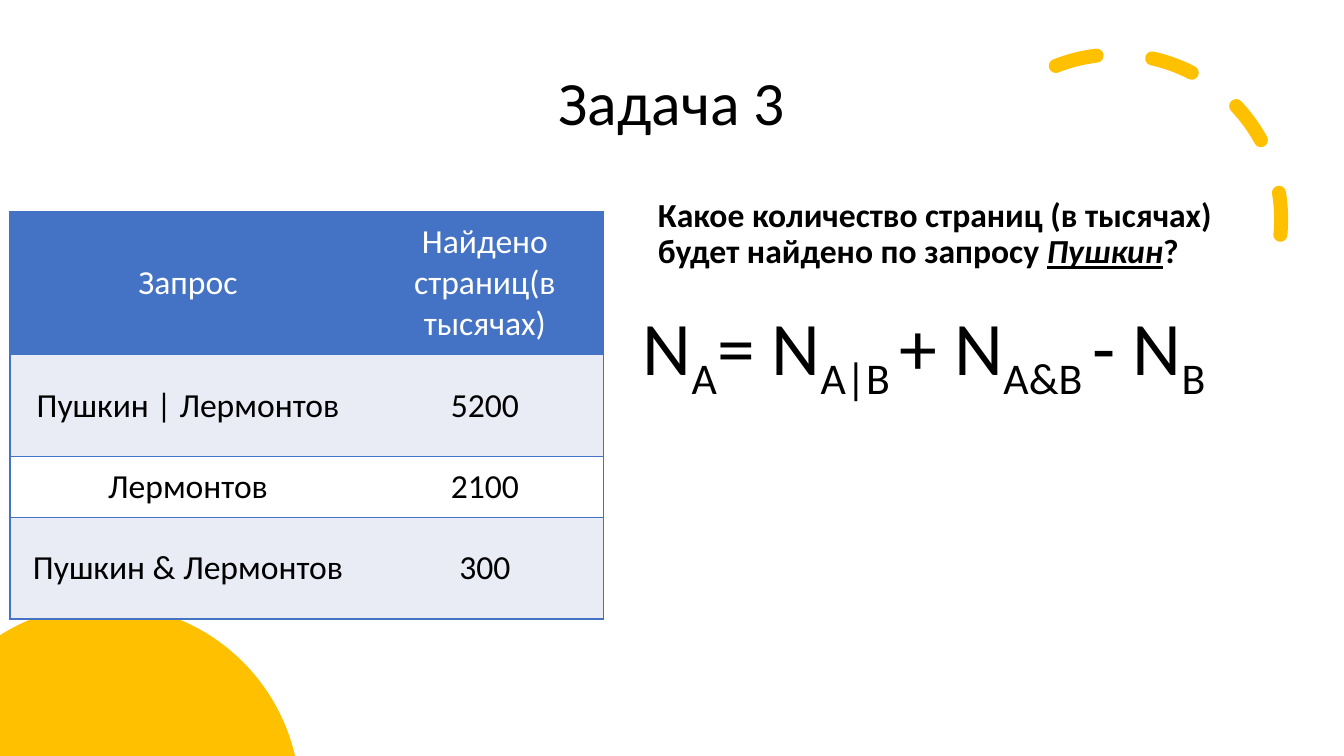
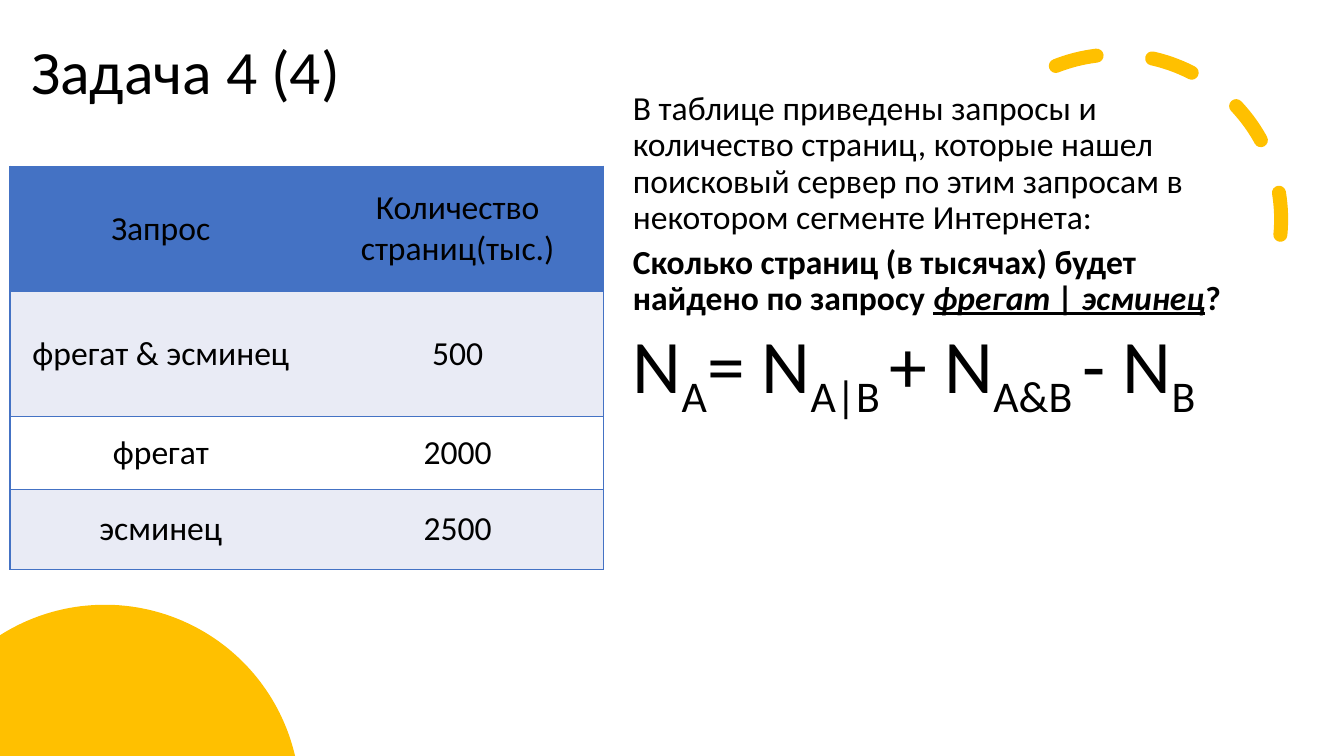
import math

import pptx
import pptx.util
import pptx.dml.color
import pptx.enum.dml
import pptx.enum.shapes
import pptx.enum.text
import pptx.oxml.ns
import pptx.oxml.xmlchemy
from lxml import etree

RGBColor = pptx.dml.color.RGBColor
Align = pptx.enum.text.PP_ALIGN
Anchor = pptx.enum.text.MSO_ANCHOR
qn = pptx.oxml.ns.qn

WIDTH = pptx.util.Inches(13.333)
HEIGHT = pptx.util.Inches(7.5)
FONT = "Calibri"
BLACK = RGBColor(0x00, 0x00, 0x00)
WHITE = RGBColor(0xFF, 0xFF, 0xFF)
YELLOW = RGBColor(0xFF, 0xC0, 0x00)
BLUE = RGBColor(0x44, 0x72, 0xC4)
PALE = RGBColor(0xE9, 0xEB, 0xF5)

TITLE_SIZE, BODY_SIZE, FORMULA_SIZE = 44, 24, 54
TABLE_LEFT = 0.75
FORMULA = [("N", ""), ("A", "_"), ("= N", ""), ("A|B ", "_"),
           ("+ N", ""), ("A&B ", "_"), ("- N", ""), ("B", "_")]


def across(percent):
    return round(WIDTH * percent / 100)


def down(percent):
    return round(HEIGHT * percent / 100)


def box(left, top, width, height):
    return across(left), down(top), across(width), down(height)


def add_run(paragraph, text, size, color=BLACK, style=""):
    run = paragraph.add_run()
    run.text = text
    font = run.font
    font.name, font.size = FONT, pptx.util.Pt(size)
    font.color.rgb = color
    font.bold = "b" in style
    font.italic = "i" in style
    font.underline = "u" in style
    if "_" in style:
        run._r.get_or_add_rPr().set("baseline", "-25000")


def add_title(slide, text, place, align):
    title = slide.shapes.title
    title.left, title.top, title.width, title.height = box(*place)
    frame = title.text_frame
    frame.auto_size = pptx.enum.text.MSO_AUTO_SIZE.NONE
    frame.vertical_anchor = Anchor.MIDDLE
    paragraph = frame.paragraphs[0]
    paragraph.alignment, paragraph.line_spacing = align, 0.9
    add_run(paragraph, text, TITLE_SIZE)


def add_text(slide, place, paragraphs, size=BODY_SIZE, before=0, after=6):
    frame = slide.shapes.add_textbox(*box(*place)).text_frame
    frame.word_wrap = True
    for index, runs in enumerate(paragraphs):
        paragraph = frame.add_paragraph() if index else frame.paragraphs[0]
        paragraph.line_spacing = 0.9
        paragraph.space_before = pptx.util.Pt(before)
        paragraph.space_after = pptx.util.Pt(after)
        for text, style in runs:
            add_run(paragraph, text, size, style=style)


def add_formula(slide, left, top):
    add_text(slide, (left, top, 45.9, 14.4), [FORMULA], FORMULA_SIZE, 10, 0)


def add_dashed_arc(slide):
    diameter = across(24.53)
    arc = slide.shapes.add_shape(pptx.enum.shapes.MSO_SHAPE.ARC,
                                 across(70.8), down(7.2), diameter, diameter)
    arc.shadow.inherit = False
    arc.adjustments[0], arc.adjustments[1] = 144.42, 0
    arc.rotation = 66.1
    arc.fill.background()
    arc.line.color.rgb = YELLOW
    arc.line.width = pptx.util.Pt(10)
    arc.line.dash_style = pptx.enum.dml.MSO_LINE.DASH
    properties = arc._element.spPr
    properties.find(qn("a:xfrm")).set("flipH", "1")
    properties.find(qn("a:ln")).set("cap", "rnd")


def add_corner_disc(slide, steps=90):
    center, radius = across(7.8), across(14.53)
    middle = down(80) + radius
    start = math.pi + math.acos(center / radius)
    end = 2 * math.pi - math.asin((middle - HEIGHT) / radius)
    angles = [start + (end - start) * step / steps for step in range(steps + 1)]
    rim = [(round(center + radius * math.cos(angle)),
            round(middle + radius * math.sin(angle))) for angle in angles]
    builder = slide.shapes.build_freeform(0, HEIGHT)
    builder.add_line_segments(rim, close=True)
    disc = builder.convert_to_shape()
    disc.shadow.inherit = False
    disc.fill.solid()
    disc.fill.fore_color.rgb = YELLOW
    disc.line.fill.background()


def add_border(cell, side, color):
    line = etree.SubElement(cell._tc.get_or_add_tcPr(), qn("a:ln" + side))
    if color is None:
        etree.SubElement(line, qn("a:noFill"))
        return
    line.set("w", str(pptx.util.Pt(1)))
    fill = etree.SubElement(line, qn("a:solidFill"))
    etree.SubElement(fill, qn("a:srgbClr")).set("val", str(color))


def format_cell(cell, text, color, background, insets, borders):
    for side, border in borders.items():
        add_border(cell, side, border)
    cell.fill.solid()
    cell.fill.fore_color.rgb = background
    cell.vertical_anchor = Anchor.MIDDLE
    cell.margin_left = cell.margin_right = pptx.util.Inches(insets[0])
    cell.margin_top = cell.margin_bottom = pptx.util.Inches(insets[1])
    paragraph = cell.text_frame.paragraphs[0]
    paragraph.alignment = Align.CENTER
    add_run(paragraph, text, BODY_SIZE, color)


def add_query_table(slide, top, columns, heights, insets, header_color, rows):
    place = box(TABLE_LEFT, top, sum(columns), sum(heights))
    table = slide.shapes.add_table(len(rows), len(columns), *place).table
    table.first_row = table.horz_banding = False
    for column, width in zip(table.columns, columns):
        column.width = across(width)
    for row, height in zip(table.rows, heights):
        row.height = down(height)
    last = len(columns) - 1
    for r, values in enumerate(rows):
        background = BLUE if r == 0 else PALE if r % 2 else WHITE
        color = BLACK if r else header_color
        for c, text in enumerate(values):
            borders = {"L": None if c else BLUE, "R": BLUE if c == last else None,
                       "T": BLUE, "B": BLUE}
            format_cell(table.cell(r, c), text, color, background, insets, borders)


def add_task_slide(deck, title, place, align):
    slide = deck.slides.add_slide(deck.slide_layouts[5])
    add_title(slide, title, place, align)
    add_dashed_arc(slide)
    add_corner_disc(slide)
    return slide


def main():
    deck = pptx.Presentation()
    deck.slide_width, deck.slide_height = WIDTH, HEIGHT

    poets = add_task_slide(deck, "Задача 3", (27.6, 4.27, 44.78, 19.33), Align.CENTER)
    add_text(poets, (48.22, 25.6, 44.78, 13.6), [
        [("Какое количество страниц (в тысячах) будет найдено по запросу ", "b"),
         ("Пушкин", "biu"), ("?", "b")]])
    add_query_table(poets, 28, (26.48, 17.7), (18.93, 13.47, 8, 13.47),
                    (0.17, 0.08), WHITE, [
                        ("Запрос", "Найдено страниц(в тысячах)"),
                        ("Пушкин | Лермонтов", "5200"),
                        ("Лермонтов", "2100"),
                        ("Пушкин & Лермонтов", "300")])
    add_formula(poets, 47.1, 39.2)

    ships = add_task_slide(deck, "Задача 4 (4)", (1.58, 0.13, 44.78, 19.33), Align.LEFT)
    add_text(ships, (46.35, 11.47, 47.48, 33.07), [
        [("В таблице приведены запросы и количество страниц, которые нашел "
          "поисковый сервер по этим запросам в некотором сегменте Интернета:", "")],
        [("Сколько страниц (в тысячах) будет найдено по запросу ", "b"),
         ("фрегат | эсминец", "biu"), ("?", "b")]])
    add_query_table(ships, 22, (22.43, 21.75), (16.53, 16.53, 9.73, 10.53),
                    (0.19, 0.13), BLACK, [
                        ("Запрос", "Количество страниц(тыс.)"),
                        ("фрегат & эсминец", "500"),
                        ("фрегат", "2000"),
                        ("эсминец", "2500")])
    add_formula(ships, 46.35, 41.6)

    deck.save("out.pptx")


if __name__ == "__main__":
    main()
